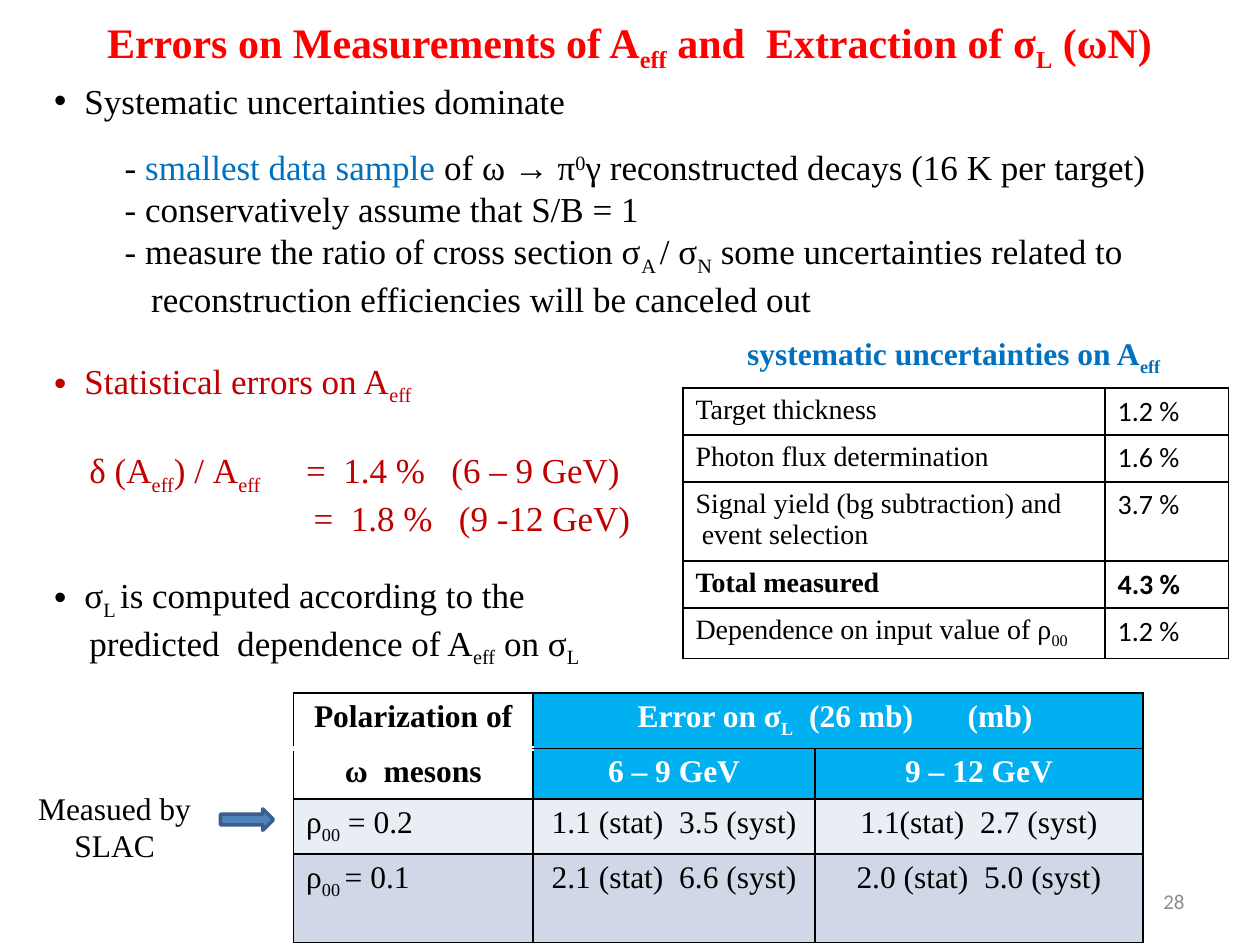
from dataclasses import dataclass
from lxml.etree import SubElement
from pptx import Presentation
from pptx.dml.color import RGBColor
from pptx.enum.shapes import MSO_SHAPE
from pptx.enum.text import MSO_ANCHOR, MSO_AUTO_SIZE, PP_ALIGN
from pptx.oxml.ns import qn
from pptx.util import Inches, Pt


@dataclass
class Theme:
    serif: str = "Times New Roman"
    sans: str = "Calibri"
    black: str = "000000"
    white: str = "FFFFFF"
    red: str = "FF0000"
    dark_red: str = "C00000"
    accent: str = "0070C0"
    gray: str = "8C8C8C"
    header: str = "00B0F0"
    light_band: str = "E9EDF4"
    dark_band: str = "D0D8E8"
    arrow: str = "4F81BD"
    arrow_line: str = "3A5F8C"
    title_size: int = 24
    list_size: int = 20
    label_size: int = 18
    table_size: int = 16
    number_size: int = 12


theme = Theme()


def write(para, text, size, color=theme.black, bold=False, font=theme.serif,
          align=PP_ALIGN.LEFT, before=0, bullet=False, margin=0, indent=0):
    properties = para._p.get_or_add_pPr()
    properties.set("marL", str(Inches(margin)))
    properties.set("indent", str(Inches(indent)))
    if bullet:
        SubElement(properties, qn("a:buFont"), typeface="Arial")
        SubElement(properties, qn("a:buChar"), char="•")
    else:
        SubElement(properties, qn("a:buNone"))
    para.alignment = align
    para.space_before = Pt(before)
    para.font.name = font
    para.font.size = Pt(size)
    para.font.bold = bold
    para.font.color.rgb = RGBColor.from_string(color)
    for position, part in enumerate(text.split("~")):
        if not part:
            continue
        span = para.add_run()
        if position % 2 == 0:
            span.text = part
            continue
        span.text = part[1:]
        if part[0] == "*":
            span.font.color.rgb = RGBColor.from_string(theme.accent)
        else:
            span.font._element.set("baseline", "-25000" if part[0] == "_" else "30000")


def set_borders(cell, white_side=""):
    properties = cell._tc.get_or_add_tcPr()
    for position, side in enumerate("LRTB"):
        white = side == white_side
        line = properties.makeelement(qn(f"a:ln{side}"), {"w": str(Pt(3 if white else 1))})
        fill = SubElement(line, qn("a:solidFill"))
        SubElement(fill, qn("a:srgbClr"), val=theme.white if white else theme.black)
        properties.insert(position, line)


deck = Presentation()
deck.slide_width, deck.slide_height = Inches(10), Inches(7.5)
page = deck.slides.add_slide(deck.slide_layouts[4])
holders = {holder.placeholder_format.idx: holder for holder in page.placeholders}

bulleted = dict(bullet=True, margin=0.24, indent=-0.24)
dashed = dict(margin=0.56)
blocks = [
    (0, (0.75, 0.08, 8.71, 0.5), [
        ("Errors on Measurements of A~_eff~ and  Extraction of σ~_L~ (ωN)",
         dict(size=theme.title_size, color=theme.red, bold=True))]),
    (2, (0.33, 0.58, 9.08, 1.92), [
        ("Systematic uncertainties dominate", bulleted),
        ("- ~*smallest data sample~ of ω → π~^0~γ reconstructed decays (16 K per target)",
         dict(before=14, **dashed)),
        ("- conservatively assume that S/B = 1", dashed),
        ("- measure the ratio of cross section σ~_A ~/ σ~_N~ some uncertainties related to", dashed),
        ("reconstruction efficiencies will be canceled out", dict(margin=0.77))]),
    (4, (0.33, 2.8, 5, 1.6), [
        ("Statistical errors on A~_eff~", dict(color=theme.dark_red, **bulleted)),
        ("δ (A~_eff~) / A~_eff~\t=  1.4 %   (6 – 9 GeV)",
         dict(color=theme.dark_red, before=24, indent=0.28)),
        ("=  1.8 %   (9 -12 GeV)", dict(color=theme.dark_red, margin=2.06))]),
    (3, (0.33, 4.5, 4.57, 0.77), [
        ("σ~_L ~is computed according to the", bulleted),
        ("predicted  dependence of A~_eff~ on σ~_L~", dict(margin=0.28))]),
    (1, (5.83, 2.6, 3.61, 0.4), [
        ("systematic uncertainties on A~_eff~",
         dict(size=theme.label_size, color=theme.accent, bold=True))]),
]
for index, place, lines in blocks:
    holder = holders[index]
    holder.left, holder.top, holder.width, holder.height = map(Inches, place)
    frame = holder.text_frame
    frame.auto_size = MSO_AUTO_SIZE.NONE
    frame.vertical_anchor = MSO_ANCHOR.TOP
    frame.word_wrap = True
    for position, (text, style) in enumerate(lines):
        para = frame.add_paragraph() if position else frame.paragraphs[0]
        write(para, text, **{"size": theme.list_size, **style})

uncertainties = [
    ("Target thickness", "1.2 %", 0.37),
    ("Photon flux determination", "1.6 %", 0.37),
    ("Signal yield (bg subtraction) and\nevent selection", "3.7 %", 0.63),
    ("Total measured", "4.3 %", 0.37),
    ("Dependence on input value of ρ~_00~", "1.2 %", 0.4),
]
table = page.shapes.add_table(5, 2, Inches(5.42), Inches(3.08), Inches(4.33), Inches(2.14)).table
table.first_row = table.horz_banding = False
table.columns[0].width, table.columns[1].width = Inches(3.35), Inches(0.98)
for row, (source, value, height) in enumerate(uncertainties):
    table.rows[row].height = Inches(height)
    bold = source == "Total measured"
    for column, (content, font) in enumerate([(source, theme.serif), (value, theme.sans)]):
        cell = table.cell(row, column)
        cell.fill.background()
        set_borders(cell)
        for position, text in enumerate(content.split("\n")):
            para = cell.text_frame.add_paragraph() if position else cell.text_frame.paragraphs[0]
            write(para, text, theme.table_size, bold=bold, font=font, margin=0.05 * position)

errors = [
    ("Polarization of", "Error on σ~_L~  (26 mb)\t(mb)", ""),
    ("ω  mesons", "6 – 9 GeV", "9 – 12 GeV"),
    ("ρ~_00~ = 0.2", "1.1 (stat)  3.5 (syst)", "1.1(stat)  2.7 (syst)"),
    ("ρ~_00 ~= 0.1", "2.1 (stat)  6.6 (syst)", "2.0 (stat)  5.0 (syst)"),
]
bands = [theme.header, theme.header, theme.light_band, theme.dark_band]
table = page.shapes.add_table(4, 3, Inches(2.33), Inches(5.5), Inches(6.74), Inches(1.98)).table
table.first_row = table.horz_banding = False
for column, width in enumerate([1.9, 2.24, 2.6]):
    table.columns[column].width = Inches(width)
table.cell(0, 1).merge(table.cell(0, 2))
for row, height in enumerate([0.44, 0.4, 0.44, 0.7]):
    table.rows[row].height = Inches(height)
    heading = row < 2
    for column, text in enumerate(errors[row]):
        cell = table.cell(row, column)
        if heading and column == 0:
            cell.fill.background()
            set_borders(cell, white_side="BT"[row])
        else:
            cell.fill.solid()
            cell.fill.fore_color.rgb = RGBColor.from_string(bands[row])
            set_borders(cell)
        if not text:
            continue
        tabbed = "\t" in text
        if tabbed:
            cell.margin_left = Inches(0.45)
        left = tabbed or (column == 0 and not heading)
        write(cell.text_frame.paragraphs[0], text, theme.label_size, bold=heading,
              color=theme.white if heading and column else theme.black,
              align=PP_ALIGN.LEFT if left else PP_ALIGN.CENTER,
              indent=0.38 if tabbed else 0)

labels = [
    ((0.18, 6.21, 1.46, 0.71), ["Measued by", "SLAC"], MSO_ANCHOR.TOP,
     dict(size=theme.label_size, align=PP_ALIGN.CENTER)),
    ((7.17, 6.95, 2.33, 0.4), ["28"], MSO_ANCHOR.MIDDLE,
     dict(size=theme.number_size, color=theme.gray, font=theme.sans, align=PP_ALIGN.RIGHT)),
]
for place, lines, anchor, style in labels:
    frame = page.shapes.add_textbox(*map(Inches, place)).text_frame
    frame.word_wrap = True
    frame.vertical_anchor = anchor
    for position, text in enumerate(lines):
        write(frame.add_paragraph() if position else frame.paragraphs[0], text, **style)

arrow = page.shapes.add_shape(MSO_SHAPE.RIGHT_ARROW, Inches(1.75), Inches(6.42), Inches(0.42), Inches(0.17))
arrow.shadow.inherit = False
arrow.fill.solid()
arrow.fill.fore_color.rgb = RGBColor.from_string(theme.arrow)
arrow.line.color.rgb = RGBColor.from_string(theme.arrow_line)
arrow.line.width = Pt(2)

deck.save("out.pptx")
